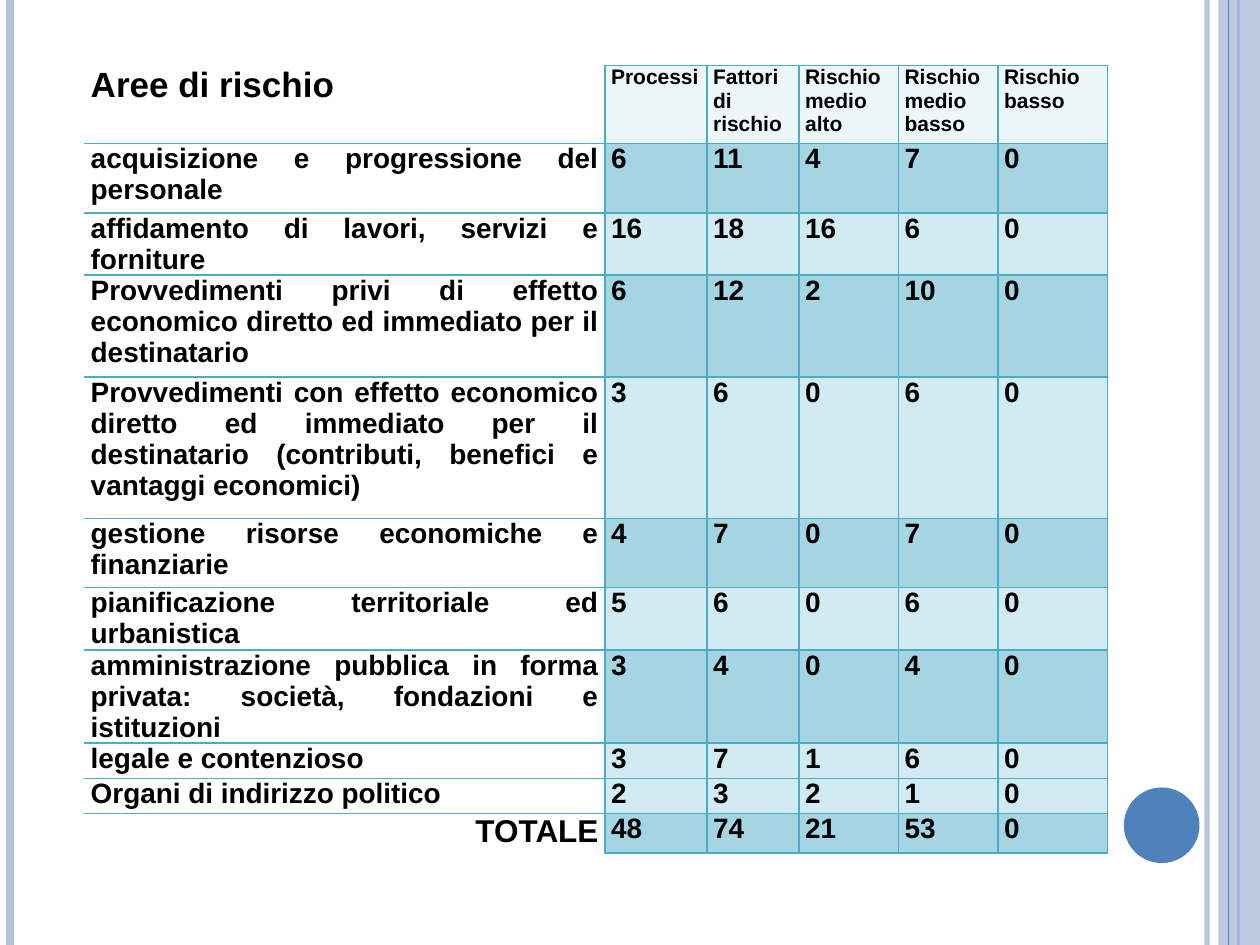
"""Builds the slide with the table of risk areas."""
from lxml.etree import SubElement
from pptx import Presentation
from pptx.dml.color import RGBColor
from pptx.enum.shapes import MSO_CONNECTOR, MSO_SHAPE
from pptx.enum.text import PP_ALIGN
from pptx.oxml.ns import qn
from pptx.util import Inches, Pt

THEME = {
    "font": "Arial", "text": "000000", "white": "FFFFFF", "border": "4BACC6",
    "head": "EDF6F9", "dark": "A5D5E2", "light": "D2EAF1",
    "pale": "B3C1DB", "blue": "4F81BD",
    "area_head": 20, "column_head": 12, "body": 16, "total": 18,
}
HEADERS = ["Aree di rischio", "Processi", "Fattori di rischio",
           "Rischio medio alto", "Rischio medio basso", "Rischio basso"]
AREAS = [
    ("acquisizione e progressione del personale", 6, 11, 4, 7, 0),
    ("affidamento di lavori, servizi e forniture", 16, 18, 16, 6, 0),
    ("Provvedimenti privi di effetto economico diretto ed immediato "
     "per il destinatario", 6, 12, 2, 10, 0),
    ("Provvedimenti con effetto economico diretto ed immediato per il "
     "destinatario (contributi, benefici e vantaggi economici)", 3, 6, 0, 6, 0),
    ("gestione risorse economiche e finanziarie", 4, 7, 0, 7, 0),
    ("pianificazione territoriale ed urbanistica", 5, 6, 0, 6, 0),
    ("amministrazione pubblica in forma privata: società, fondazioni "
     "e istituzioni", 3, 4, 0, 4, 0),
    ("legale e contenzioso", 3, 7, 1, 6, 0),
    ("Organi di indirizzo politico", 2, 3, 2, 1, 0),
]
TOTALS = ("TOTALE", 48, 74, 21, 53, 0)
ROWS = [HEADERS, *AREAS, TOTALS]
ROW_FILLS = ["head", "dark", "light", "dark", "light", "dark", "light",
             "dark", "light", "light", "dark"]
COLUMN_WIDTHS = [4.13, 0.81, 0.73, 0.79, 0.79, 0.87]
ROW_HEIGHTS = [0.62, 0.55, 0.49, 0.81, 1.12, 0.55, 0.49, 0.73, 0.28, 0.28, 0.31]
LEFT_STRIPES = [(9.58, "pale", 3, 93), (0.08, "pale", 4.5, 100), (9.83, "blue", 1.5, 100)]
TOP_STRIPE = (9.75, "blue", 0.75, 100)


def color(name):
    return RGBColor.from_string(THEME[name])


def set_opacity(fill_parent, percent):
    srgb = next(fill_parent.iter(qn("a:srgbClr")))
    SubElement(srgb, qn("a:alpha"), val=str(percent * 1000))


def add_stripe(slide, x, fill, width, opacity):
    stripe = slide.shapes.add_connector(
        MSO_CONNECTOR.STRAIGHT, Inches(x), 0, Inches(x), Inches(7.5))
    stripe.line.color.rgb = color(fill)
    stripe.line.width = Pt(width)
    properties = stripe.element.spPr
    if opacity < 100:
        set_opacity(properties, opacity)
    SubElement(properties, qn("a:effectLst"))


def add_block(slide, kind, bounds, fill, opacity=100):
    block = slide.shapes.add_shape(kind, *map(Inches, bounds))
    block.shadow.inherit = False
    block.fill.solid()
    block.fill.fore_color.rgb = color(fill)
    block.line.fill.background()
    if opacity < 100:
        set_opacity(block.element.spPr, opacity)


def add_borders(cell, sides):
    properties = cell._tc.get_or_add_tcPr()
    for side in sides:
        line = SubElement(properties, qn(f"a:ln{side}"), w=str(Pt(1)))
        fill = SubElement(line, qn("a:solidFill"))
        SubElement(fill, qn("a:srgbClr"), val=THEME["border"])


def border_sides(row, column):
    if column:
        return "LRTB"
    if row == 0:
        return "RB"
    return "RT" if row == len(ROWS) - 1 else "RTB"


def text_size(row, column):
    if row == 0:
        return THEME["column_head" if column else "area_head"]
    is_total_label = row == len(ROWS) - 1 and column == 0
    return THEME["total" if is_total_label else "body"]


def fill_cell(cell, row, column, value):
    add_borders(cell, border_sides(row, column))
    cell.fill.solid()
    cell.fill.fore_color.rgb = color(ROW_FILLS[row] if column else "white")
    cell.margin_left = cell.margin_right = Inches(0.05)
    cell.margin_top = cell.margin_bottom = 0
    para = cell.text_frame.paragraphs[0]
    para.text = str(value)
    para.alignment = PP_ALIGN.RIGHT if value == "TOTALE" else PP_ALIGN.JUSTIFY
    font = para.runs[0].font
    font.name, font.bold = THEME["font"], True
    font.size = Pt(text_size(row, column))
    font.color.rgb = color("text")


def add_risk_table(slide):
    frame = slide.shapes.add_table(
        len(ROWS), len(HEADERS), Inches(0.67), Inches(0.52),
        Inches(sum(COLUMN_WIDTHS)), Inches(sum(ROW_HEIGHTS)))
    table = frame.table
    table.first_row = table.horz_banding = False
    for column, width in zip(table.columns, COLUMN_WIDTHS):
        column.width = Inches(width)
    for row, height in zip(table.rows, ROW_HEIGHTS):
        row.height = Inches(height)
    for row, values in enumerate(ROWS):
        for column, value in enumerate(values):
            fill_cell(table.cell(row, column), row, column, value)


def main():
    deck = Presentation()
    deck.slide_width, deck.slide_height = Inches(10), Inches(7.5)
    slide = deck.slides.add_slide(deck.slide_layouts[6])
    for stripe in LEFT_STRIPES:
        add_stripe(slide, *stripe)
    add_block(slide, MSO_SHAPE.RECTANGLE, (9.67, 0, 0.33, 7.5), "pale", 87)
    add_stripe(slide, *TOP_STRIPE)
    add_block(slide, MSO_SHAPE.OVAL, (8.92, 6.25, 0.6, 0.6), "blue")
    add_risk_table(slide)
    deck.save("out.pptx")


if __name__ == "__main__":
    main()
